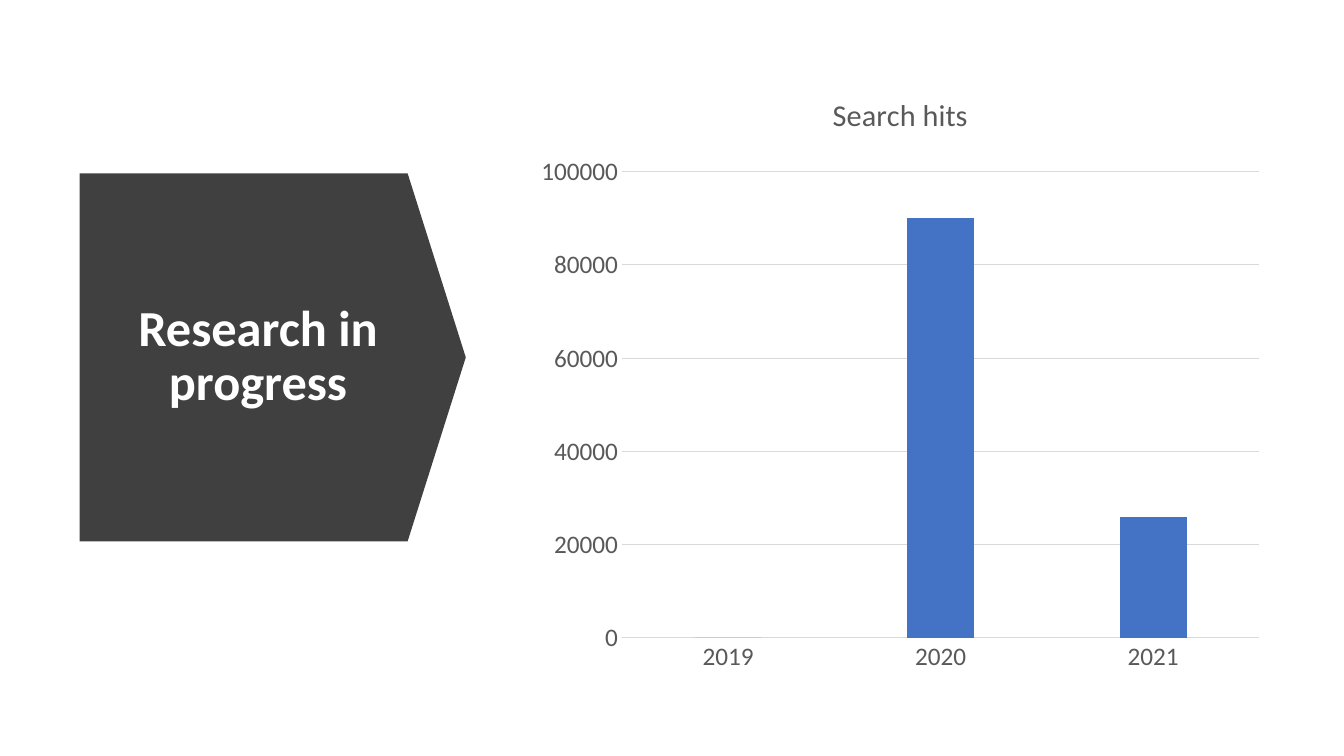
from pptx import Presentation
from pptx.chart.data import CategoryChartData
from pptx.dml.color import RGBColor
from pptx.enum.chart import XL_CHART_TYPE as ChartType, XL_TICK_MARK as TickMark
from pptx.enum.shapes import MSO_SHAPE as Shape
from pptx.enum.text import MSO_ANCHOR as Anchor, MSO_AUTO_SIZE as AutoSize, PP_ALIGN as Align
from pptx.util import Inches, Pt

FONT = "Calibri"
HITS = {"2019": 0, "2020": 90000, "2021": 26000}


def color(hex_code):
    """Turn a hex string into a colour."""
    return RGBColor.from_string(hex_code)


def style_font(font, size, hex_code, bold=False):
    """Set typeface, size, colour and weight."""
    font.name, font.size, font.bold = FONT, Pt(size), bold
    font.color.rgb = color(hex_code)


def style_line(line, hex_code):
    """Draw a thin line in one colour."""
    line.color.rgb = color(hex_code)
    line.width = Pt(0.75)


def add_banner(slide, left, top, width, height):
    """Add the dark arrow that points from the title to the chart."""
    banner = slide.shapes.add_shape(
        Shape.DOWN_ARROW, Inches(left), Inches(top), Inches(width), Inches(height))
    banner.rotation = 270
    banner.adjustments[0], banner.adjustments[1] = 1, 0.158
    banner.shadow.inherit = False
    banner.fill.solid()
    banner.fill.fore_color.rgb = color("404040")
    banner.line.fill.background()
    return banner


def place_title(title, text, left, top, width, height):
    """Move the title placeholder and write its text."""
    title.left, title.top = Inches(left), Inches(top)
    title.width, title.height = Inches(width), Inches(height)
    frame = title.text_frame
    frame.word_wrap = True
    frame.auto_size = AutoSize.NONE
    frame.vertical_anchor = Anchor.MIDDLE
    paragraph = frame.paragraphs[0]
    paragraph.alignment = Align.CENTER
    paragraph.line_spacing = 0.9
    run = paragraph.add_run()
    run.text = text
    style_font(run.font, 36, "FFFFFF", bold=True)


def style_axes(chart):
    """Format both axes and the gridlines."""
    years, counts = chart.category_axis, chart.value_axis
    for axis in (years, counts):
        axis.major_tick_mark = axis.minor_tick_mark = TickMark.NONE
        style_font(axis.tick_labels.font, 18, "595959")
    style_line(years.format.line, "D9D9D9")
    counts.format.line.fill.background()
    counts.minimum_scale, counts.maximum_scale = 0, 100000
    counts.major_unit = 20000
    counts.tick_labels.number_format = "0"
    counts.tick_labels.number_format_is_linked = False
    style_line(counts.major_gridlines.format.line, "D9D9D9")


def add_hits_chart(slide, left, top, width, height):
    """Add the column chart of hits per year."""
    hits = CategoryChartData()
    hits.categories = list(HITS)
    hits.add_series("Series 1", list(HITS.values()))
    chart = slide.shapes.add_chart(
        ChartType.COLUMN_CLUSTERED, Inches(left), Inches(top),
        Inches(width), Inches(height), hits).chart
    style_font(chart.font, 18, "000000")
    chart.has_legend = False
    chart.has_title = True
    heading = chart.chart_title.text_frame.paragraphs[0].add_run()
    heading.text = "Search hits"
    style_font(heading.font, 21.6, "595959")
    columns = chart.plots[0]
    columns.gap_width, columns.overlap = 219, -27
    columns.vary_by_categories = False
    fill = columns.series[0].format.fill
    fill.solid()
    fill.fore_color.rgb = color("4472C4")
    style_axes(chart)


def main():
    """Build and save the slide."""
    deck = Presentation()
    deck.slide_width, deck.slide_height = Inches(13.33), Inches(7.5)
    slide = deck.slides.add_slide(deck.slide_layouts[5])
    title = slide.shapes.title
    banner = add_banner(slide, 0.88, 1.63, 3.65, 3.83)
    title.element.addprevious(banner.element)
    place_title(title, "Research in progress", 1.12, 2.15, 2.88, 2.79)
    add_hits_chart(slide, 5.22, 0.7, 7.42, 6.09)
    deck.save("out.pptx")


if __name__ == "__main__":
    main()
